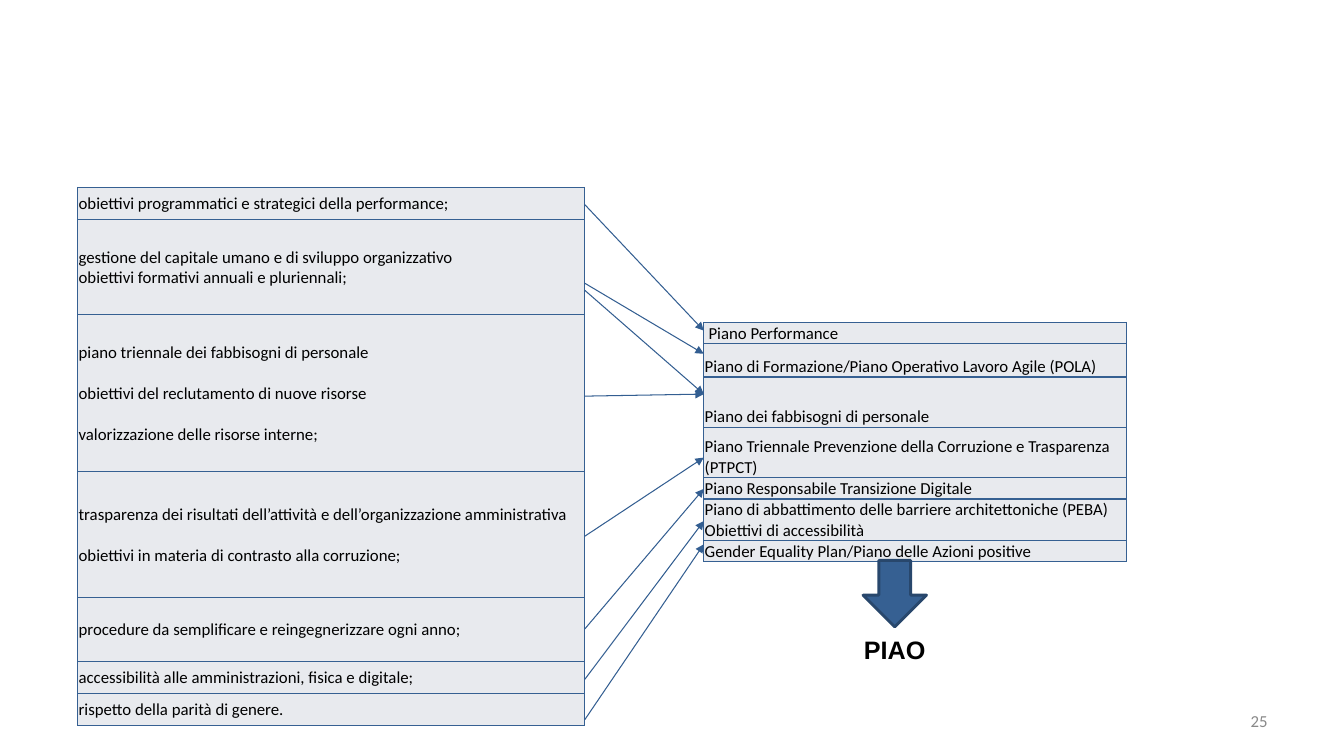
from pptx import Presentation
from pptx.dml.color import RGBColor
from pptx.enum.shapes import MSO_CONNECTOR, MSO_SHAPE
from pptx.enum.text import MSO_ANCHOR, PP_ALIGN
from pptx.oxml import parse_xml
from pptx.oxml.ns import nsdecls, qn
from pptx.util import Inches, Pt

STRAIGHT = MSO_CONNECTOR.STRAIGHT
DOWN_ARROW = MSO_SHAPE.DOWN_ARROW
MIDDLE, BOTTOM = MSO_ANCHOR.MIDDLE, MSO_ANCHOR.BOTTOM
LEFT, RIGHT, JUSTIFY = PP_ALIGN.LEFT, PP_ALIGN.RIGHT, PP_ALIGN.JUSTIFY

COLORS = {"text": "000000", "number": "898989", "cell": "E8EAEE", "border": "366092",
          "line": "335E91", "arrow": "366092", "arrow_edge": "28476C"}
BLANK_LAYOUT = 6
OBJECTIVES_LEFT, OBJECTIVES_WIDTH = 0.77, 5.03
PLANS_LEFT, PLANS_WIDTH = 6.98, 4.19

# Row height, lines of text, space between lines in points, alignment
OBJECTIVES = [
    (0.32, ["obiettivi programmatici e strategici della performance;"], 0, JUSTIFY),
    (0.94, ["gestione del capitale umano e di sviluppo organizzativo",
            "obiettivi formativi annuali e pluriennali;"], 0, JUSTIFY),
    (1.56, ["piano triennale dei fabbisogni di personale",
            "obiettivi del reclutamento di nuove risorse",
            "valorizzazione delle risorse interne;"], 14.6, JUSTIFY),
    (1.25, ["trasparenza dei risultati dell’attività e dell’organizzazione amministrativa",
            "obiettivi in materia di contrasto alla corruzione;"], 14.6, JUSTIFY),
    (0.63, ["procedure da semplificare e reingegnerizzare ogni anno;"], 0, JUSTIFY),
    (0.32, ["accessibilità alle amministrazioni, fisica e digitale;"], 0, JUSTIFY),
    (0.32, ["rispetto della parità di genere."], 0, LEFT),
]
PLANS = [
    (0.21, [" Piano Performance"], 0, LEFT),
    (0.33, ["Piano di Formazione/Piano Operativo Lavoro Agile (POLA)"], 0, LEFT),
    (0.5, ["Piano dei fabbisogni di personale"], 0, LEFT),
    (0.5, ["Piano Triennale Prevenzione della Corruzione e Trasparenza (PTPCT)"], 0, LEFT),
    (0.21, ["Piano Responsabile Transizione Digitale"], 0, LEFT),
    (0.41, ["Piano di abbattimento delle barriere architettoniche (PEBA)",
            "Obiettivi di accessibilità"], 0, LEFT),
    (0.21, ["Gender Equality Plan/Piano delle Azioni positive"], 0, LEFT),
]
# Height at the objective, height at the plan
LINKS = [(2.03, 3.28), (2.81, 3.51), (3.93, 3.91), (2.88, 3.91),
         (5.32, 4.54), (6.24, 4.85), (6.74, 5.17), (7.14, 5.4)]


def rgb(name):
    return RGBColor.from_string(COLORS[name])


class SlideBuilder:
    def __init__(self, s):
        self.s = s

    def format_text(self, tf, size=12, font="Calibri", color="text", bold=False,
                    align=LEFT, gap=0):
        for i, p in enumerate(tf.paragraphs):
            p.alignment = align
            p.space_before = Pt(gap if i else 0)
            for r in p.runs:
                r.font.size, r.font.name, r.font.bold = Pt(size), font, bold
                r.font.color.rgb = rgb(color)

    def text(self, left, top, width, height, text, wrap=True, anchor=None, **style):
        tf = self.s.shapes.add_textbox(
            Inches(left), Inches(top), Inches(width), Inches(height)).text_frame
        tf.word_wrap = wrap
        if anchor is not None:
            tf.vertical_anchor = anchor
        tf.text = text
        self.format_text(tf, **style)

    def borders(self, cell):
        tcPr = cell._tc.get_or_add_tcPr()
        for side in ("lnL", "lnR", "lnT", "lnB"):
            tcPr.append(parse_xml(
                f'<a:{side} {nsdecls("a")} w="{Pt(1)}"><a:solidFill>'
                f'<a:srgbClr val="{COLORS["border"]}"/></a:solidFill></a:{side}>'))

    def table(self, left, top, width, rows, anchor):
        """Add a one-column table from (height, lines, gap, align) rows."""
        height = sum(row[0] for row in rows)
        table = self.s.shapes.add_table(
            len(rows), 1, Inches(left), Inches(top), Inches(width), Inches(height)).table
        table.first_row = table.horz_banding = False
        for i, (row_height, lines, gap, align) in enumerate(rows):
            table.rows[i].height = Inches(row_height)
            cell = table.cell(i, 0)
            cell.margin_left = cell.margin_right = cell.margin_top = Inches(0.01)
            cell.margin_bottom = 0
            cell.vertical_anchor = anchor
            self.borders(cell)
            cell.fill.solid()
            cell.fill.fore_color.rgb = rgb("cell")
            cell.text_frame.text = "\n".join(lines)
            self.format_text(cell.text_frame, align=align, gap=gap)

    def link(self, x1, y1, x2, y2):
        c = self.s.shapes.add_connector(
            STRAIGHT, Inches(x1), Inches(y1), Inches(x2), Inches(y2))
        c.line.color.rgb = rgb("line")
        c.line.width = Pt(0.75)
        spPr = c._element.spPr
        spPr.find(qn("a:ln")).append(
            parse_xml(f'<a:tailEnd {nsdecls("a")} type="triangle"/>'))
        spPr.append(parse_xml(f'<a:effectLst {nsdecls("a")}/>'))

    def down_arrow(self, left, top, width, height):
        sp = self.s.shapes.add_shape(
            DOWN_ARROW, Inches(left), Inches(top), Inches(width), Inches(height))
        sp.shadow.inherit = False
        sp.fill.solid()
        sp.fill.fore_color.rgb = rgb("arrow")
        sp.line.color.rgb = rgb("arrow_edge")
        sp.line.width = Pt(2)


def main():
    prs = Presentation()
    prs.slide_width, prs.slide_height = Inches(13.33), Inches(7.5)
    slide = SlideBuilder(prs.slides.add_slide(prs.slide_layouts[BLANK_LAYOUT]))
    slide.text(9.56, 6.95, 3.11, 0.4, "25", anchor=MIDDLE, color="number", align=RIGHT)
    slide.table(OBJECTIVES_LEFT, 1.86, OBJECTIVES_WIDTH, OBJECTIVES, MIDDLE)
    slide.table(PLANS_LEFT, 3.2, PLANS_WIDTH, PLANS, BOTTOM)
    for start, end in LINKS:
        slide.link(OBJECTIVES_LEFT + OBJECTIVES_WIDTH, start, PLANS_LEFT, end)
    slide.down_arrow(8.56, 5.56, 0.63, 0.66)
    slide.text(8.47, 6.24, 0.82, 0.4, "PIAO", wrap=False, size=18, font="Arial", bold=True)
    prs.save("out.pptx")


if __name__ == "__main__":
    main()
